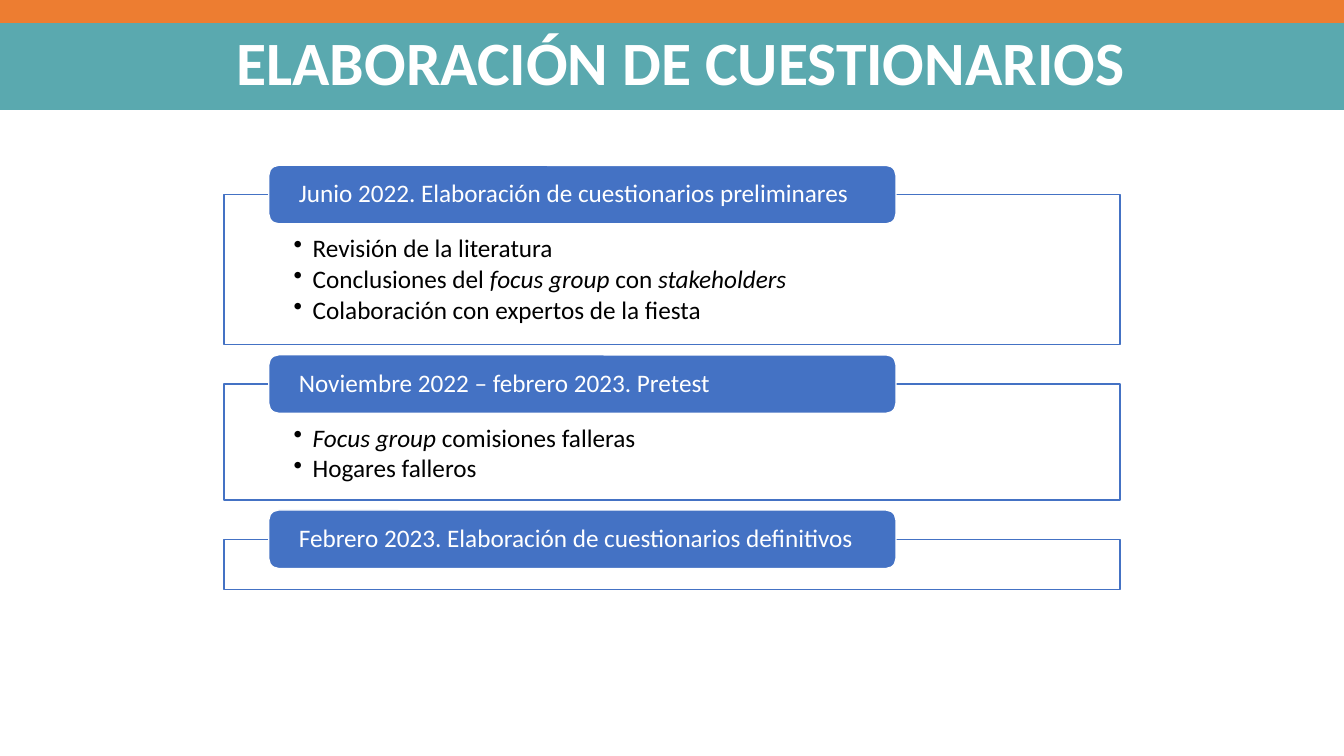
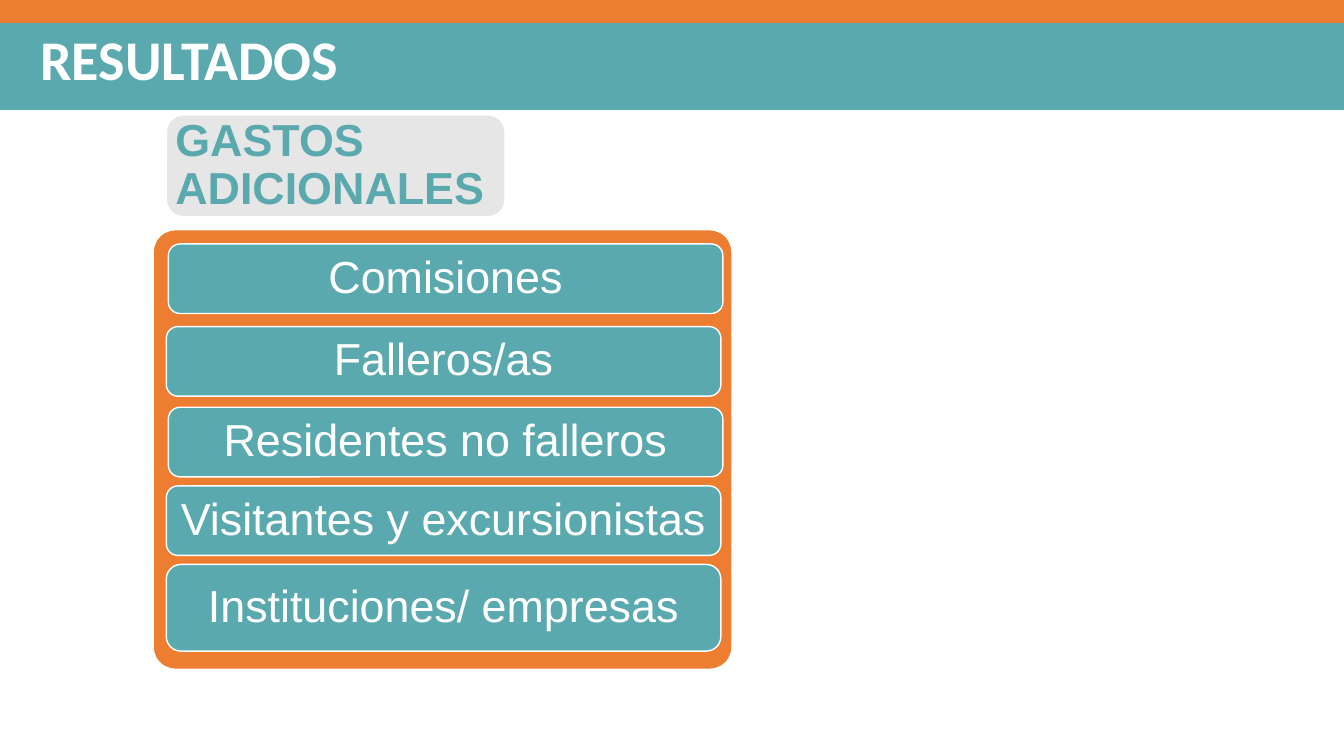
"""Build two slides: a questionnaire timeline and a list of additional expenses."""
import pptx
import pptx.dml.color
import pptx.enum.shapes
import pptx.enum.text
import pptx.oxml
import pptx.oxml.ns
import pptx.util

Inches = pptx.util.Inches
Pt = pptx.util.Pt
ALIGN = pptx.enum.text.PP_ALIGN
ANCHOR = pptx.enum.text.MSO_ANCHOR
RECTANGLE = pptx.enum.shapes.MSO_SHAPE.RECTANGLE
ROUNDED = pptx.enum.shapes.MSO_SHAPE.ROUNDED_RECTANGLE

WIDTH, HEIGHT = 13.33, 7.5
COLORS = {"orange": "ED7D31", "teal": "5AA9AF", "blue": "4472C4",
          "grey": "E7E6E6", "white": "FFFFFF", "black": "000000"}
BANDS = [("orange", 0, 1.09), ("teal", 0.23, 0.86)]
TITLE_STYLE = {"font": "Calibri", "color": "white", "bold": True}

STAGES = [
    ("Junio 2022. Elaboración de cuestionarios preliminares", 1.49, [
        "Revisión de la literatura",
        [("Conclusiones del ", False), ("focus group ", True),
         ("con ", False), ("stakeholders", True)],
        "Colaboración con expertos de la fiesta"]),
    ("Noviembre 2022 – febrero 2023. Pretest", 1.15, [
        [("Focus group ", True), ("comisiones falleras", False)],
        "Hogares falleros"]),
    ("Febrero 2023. Elaboración de cuestionarios definitivos", 0.5, []),
]
PANEL_WIDTH = WIDTH * 2 / 3
PANEL_TOP, PANEL_GAP = 1.93, 0.39
HEADER_HEIGHT = 0.58

SPENDERS = [
    ("Comisiones", 1.67, 2.42, 0.69),
    ("Falleros/as", 1.65, 3.24, 0.69),
    ("Residentes no falleros", 1.67, 4.04, 0.69),
    ("Visitantes y excursionistas", 1.65, 4.82, 0.69),
    ("Instituciones/ empresas", 1.65, 5.6, 0.86),
]
BAR_WIDTH = 5.5
BAR_INSETS = (0.04, 0.08, 0.04, 0.08)


def color(name):
    """Return the named colour."""
    return pptx.dml.color.RGBColor.from_string(COLORS[name])


def add_bullet(paragraph, indent=0.19):
    """Give a paragraph a hanging bullet."""
    properties = paragraph._p.get_or_add_pPr()
    properties.set("marL", str(Inches(indent)))
    properties.set("indent", str(-Inches(indent)))
    properties.append(pptx.oxml.parse_xml(
        f'<a:buChar {pptx.oxml.ns.nsdecls("a")} char="•"/>'))


def write_text(shape, paragraphs, size=18, font="Calibri", color_name="white",
               bold=False, align=ALIGN.LEFT, anchor=ANCHOR.MIDDLE, spacing=0.9,
               after=0, bullet=False, insets=(0.1, 0.05, 0.1, 0.05)):
    """Write paragraphs, each a string or a list of (text, italic) runs."""
    frame = shape.text_frame
    frame.word_wrap = True
    frame.auto_size = pptx.enum.text.MSO_AUTO_SIZE.NONE
    frame.vertical_anchor = anchor
    (frame.margin_left, frame.margin_top,
     frame.margin_right, frame.margin_bottom) = map(Inches, insets)
    for index, content in enumerate(paragraphs):
        paragraph = frame.add_paragraph() if index else frame.paragraphs[0]
        paragraph.alignment = align
        paragraph.line_spacing = spacing
        paragraph.space_after = Pt(after)
        if bullet:
            add_bullet(paragraph)
        for text, italic in [(content, False)] if isinstance(content, str) else content:
            run = paragraph.add_run()
            run.text = text
            run.font.size, run.font.name = Pt(size), font
            run.font.bold, run.font.italic = bold, italic
            run.font.color.rgb = color(color_name)


def add_box(slide, kind, box, fill, line=None, corner=None):
    """Add a flat filled shape with an optional outline."""
    shape = slide.shapes.add_shape(kind, *map(Inches, box))
    shape.shadow.inherit = False
    shape.fill.solid()
    shape.fill.fore_color.rgb = color(fill)
    if line:
        shape.line.color.rgb = color(line)
        shape.line.width = Pt(1)
    else:
        shape.line.fill.background()
    if corner is not None:
        shape.adjustments[0] = corner
    return shape


def add_bands(slide):
    """Draw the heading bands and move them to the shared layout."""
    bands = [add_box(slide, RECTANGLE, (0, top, WIDTH, height), fill)
             for fill, top, height in BANDS]
    for index, band in enumerate(bands):
        band.element.nvSpPr.cNvPr.set("id", str(100 + index))
        slide.slide_layout.shapes.element.insert(2 + index, band.element)


def set_title(slide, text, box, **style):
    """Place and format the slide title."""
    title = slide.shapes.title
    title.left, title.top, title.width, title.height = map(Inches, box)
    write_text(title, [text], font=TITLE_STYLE["font"], bold=TITLE_STYLE["bold"],
               color_name=TITLE_STYLE["color"], anchor=ANCHOR.TOP, **style)


def build_timeline(slide):
    """Stack one outlined panel with a header for each stage."""
    set_title(slide, "ELABORACIÓN DE CUESTIONARIOS", (0.48, 0.19, 12.55, 0.84),
              size=44, align=ALIGN.CENTER, spacing=1)
    left, top = (WIDTH - PANEL_WIDTH) / 2, PANEL_TOP
    for heading, height, bullets in STAGES:
        panel = add_box(slide, RECTANGLE, (left, top, PANEL_WIDTH, height), "white", "blue")
        write_text(panel, bullets, color_name="black", anchor=ANCHOR.TOP, after=2.5,
                   bullet=True, insets=(0.69, 0.41, 0.69, 0.14))
        header_box = (left + PANEL_WIDTH * 0.05, top - HEADER_HEIGHT / 2,
                      PANEL_WIDTH * 0.7, HEADER_HEIGHT)
        header = add_box(slide, ROUNDED, header_box, "blue", "white")
        write_text(header, [heading], insets=(0.27, 0, 0.27, 0))
        top += height + PANEL_GAP


def build_expenses(slide):
    """Show the spender groups as bars on an orange panel."""
    set_title(slide, "RESULTADOS", (0.3, 0.27, 13.03, 0.8), size=40)
    add_box(slide, ROUNDED, (1.52, 2.28, 5.74, 4.36), "orange", "white", 0.05)
    for label, left, top, height in SPENDERS:
        bar = add_box(slide, ROUNDED, (left, top, BAR_WIDTH, height), "teal", "white")
        write_text(bar, [label], size=32, font="Arial", align=ALIGN.CENTER,
                   insets=BAR_INSETS)
    heading = add_box(slide, ROUNDED, (1.65, 1.14, 3.36, 1.01), "grey", "white")
    write_text(heading, ["GASTOS ADICIONALES"], size=32, font="Arial",
               color_name="teal", bold=True, insets=BAR_INSETS)


def main():
    """Build and save the presentation."""
    presentation = pptx.Presentation()
    presentation.slide_width, presentation.slide_height = Inches(WIDTH), Inches(HEIGHT)
    layout = presentation.slide_layouts[5]
    slides = [presentation.slides.add_slide(layout) for _ in range(2)]
    add_bands(slides[0])
    build_timeline(slides[0])
    build_expenses(slides[1])
    presentation.save("out.pptx")


if __name__ == "__main__":
    main()
